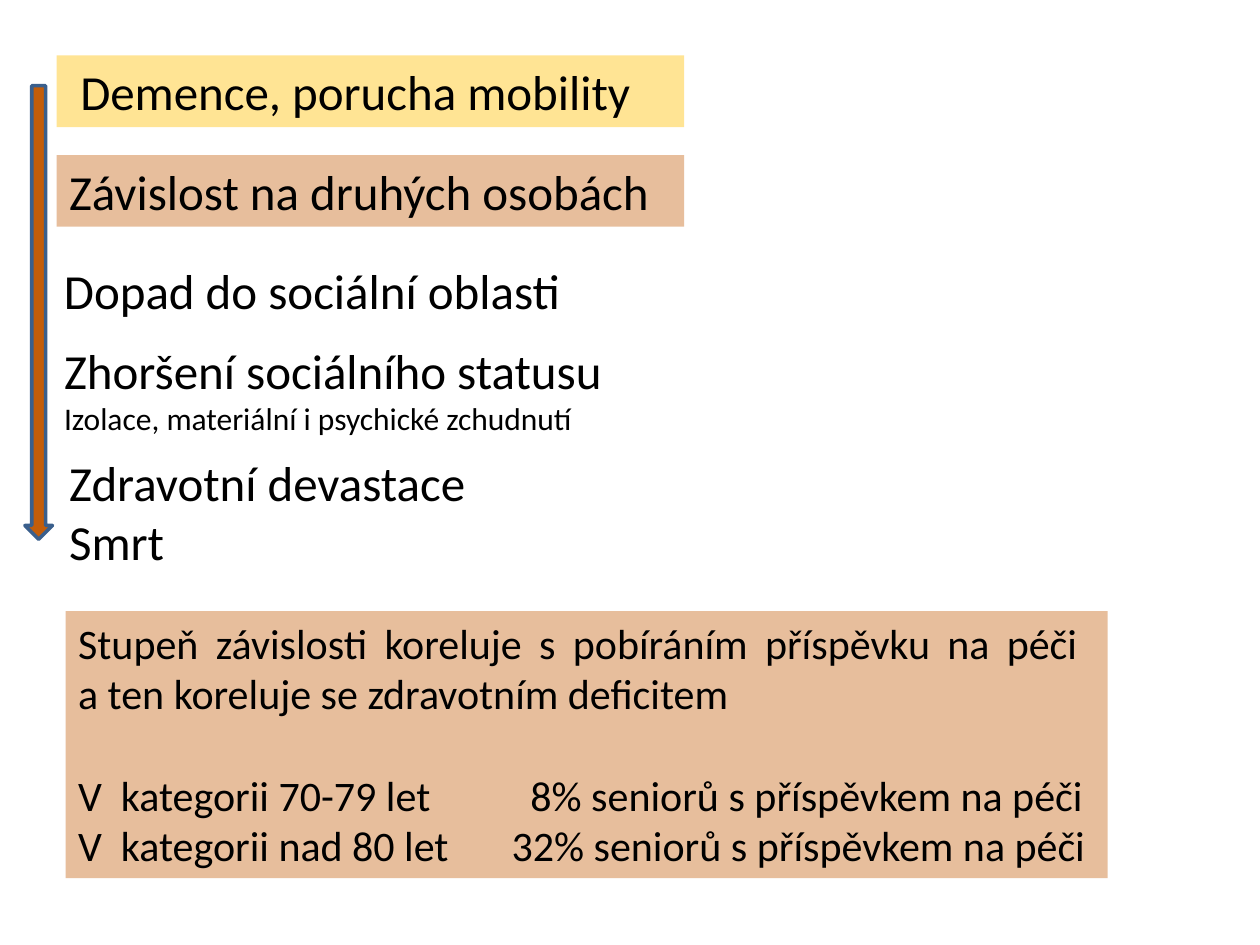
from dataclasses import dataclass
from typing import Optional

from lxml import etree
from pptx import Presentation
from pptx.dml.color import RGBColor
from pptx.enum import shapes, text
from pptx.oxml.ns import qn
from pptx.util import Pt

COLORS = {"text": "000000", "amber": "FFC000", "rust": "C35D09", "outline": "3A5F8C"}
FONT = "Calibri"
INSET = 7.2


@dataclass
class Line:
    text: str
    size: float = 28
    space_before: float = 0
    tab: Optional[float] = None
    justified: bool = False


@dataclass
class Box:
    left: float
    top: float
    width: float
    height: float
    lines: list[Line]
    fill: Optional[str] = None
    opacity: int = 100
    indent: float = 0


def set_fill(shape, color: str, opacity: int = 100) -> None:
    shape.fill.solid()
    shape.fill.fore_color.rgb = RGBColor.from_string(COLORS[color])
    if opacity < 100:
        color_element = shape._element.spPr.find(qn("a:solidFill"))[0]
        etree.SubElement(color_element, qn("a:alpha"), val=str(opacity * 1000))


def add_tab_stop(paragraph, position: float) -> None:
    tab_list = etree.SubElement(paragraph._p.get_or_add_pPr(), qn("a:tabLst"))
    etree.SubElement(tab_list, qn("a:tab"), pos=str(Pt(position)), algn="l")


def write_lines(shape, box: Box) -> None:
    frame = shape.text_frame
    frame.word_wrap = True
    frame.auto_size = text.MSO_AUTO_SIZE.NONE
    frame.vertical_anchor = text.MSO_ANCHOR.TOP
    frame.margin_left = Pt(INSET + box.indent)
    for index, line in enumerate(box.lines):
        paragraph = frame.add_paragraph() if index else frame.paragraphs[0]
        paragraph.text = line.text
        paragraph.alignment = text.PP_ALIGN.JUSTIFY if line.justified else text.PP_ALIGN.LEFT
        paragraph.space_before = Pt(line.space_before)
        if line.tab is not None:
            add_tab_stop(paragraph, line.tab)
        for run in paragraph.runs:
            run.font.name = FONT
            run.font.size = Pt(line.size)
            run.font.color.rgb = RGBColor.from_string(COLORS["text"])


def draw_box(slide, box: Box, placeholder=None) -> None:
    place = [Pt(value) for value in (box.left, box.top, box.width, box.height)]
    if placeholder is not None:
        shape = placeholder
        shape.left, shape.top, shape.width, shape.height = place
    elif box.fill:
        shape = slide.shapes.add_shape(shapes.MSO_SHAPE.RECTANGLE, *place)
        shape.shadow.inherit = False
        shape.line.fill.background()
    else:
        shape = slide.shapes.add_textbox(*place)
    if box.fill:
        set_fill(shape, box.fill, box.opacity)
    write_lines(shape, box)


def draw_down_arrow(slide, left: float, top: float, width: float, height: float) -> None:
    arrow = slide.shapes.add_shape(
        shapes.MSO_SHAPE.DOWN_ARROW, Pt(left), Pt(top), Pt(width), Pt(height))
    arrow.shadow.inherit = False
    set_fill(arrow, "rust")
    arrow.line.color.rgb = RGBColor.from_string(COLORS["outline"])
    arrow.line.width = Pt(2)


# Chain of consequences
CAUSE = Box(32.4, 31.7, 358.6, 41, [Line("Demence, porucha mobility")], "amber", 42, indent=6.3)
CONSEQUENCES = [
    Box(32.4, 88.6, 358.6, 41, [Line("Závislost na druhých osobách")], "rust", 40),
    Box(29.5, 145.4, 354, 41, [Line("Dopad do sociální oblasti")]),
    Box(29.5, 190.8, 345, 63.4, [
        Line("Zhoršení sociálního statusu"),
        Line("Izolace, materiální i psychické zchudnutí", 18),
    ]),
    Box(32.4, 254.9, 357, 75, [Line("Zdravotní devastace"), Line("Smrt")]),
]

# Share of seniors with a care allowance
ALLOWANCE = Box(37.6, 349.2, 595.4, 152.6, [
    Line("Stupeň závislosti koreluje s pobíráním příspěvku na péči \v"
         "a ten koreluje se zdravotním deficitem", 24, justified=True),
    Line("V  kategorii 70-79 let\t8% seniorů s příspěvkem na péči", 24,
         space_before=29.2, tab=258.5),
    Line("V  kategorii nad 80 let\t32% seniorů s příspěvkem na péči", 24, tab=247.7),
], "rust", 40)


def main() -> None:
    presentation = Presentation()
    presentation.slide_width, presentation.slide_height = Pt(720), Pt(540)
    slide = presentation.slides.add_slide(presentation.slide_layouts[5])

    draw_box(slide, CAUSE, slide.shapes.title)
    for box in CONSEQUENCES:
        draw_box(slide, box)
    draw_down_arrow(slide, 14.2, 49, 15.8, 259.2)
    draw_box(slide, ALLOWANCE)

    presentation.save("out.pptx")


if __name__ == "__main__":
    main()
